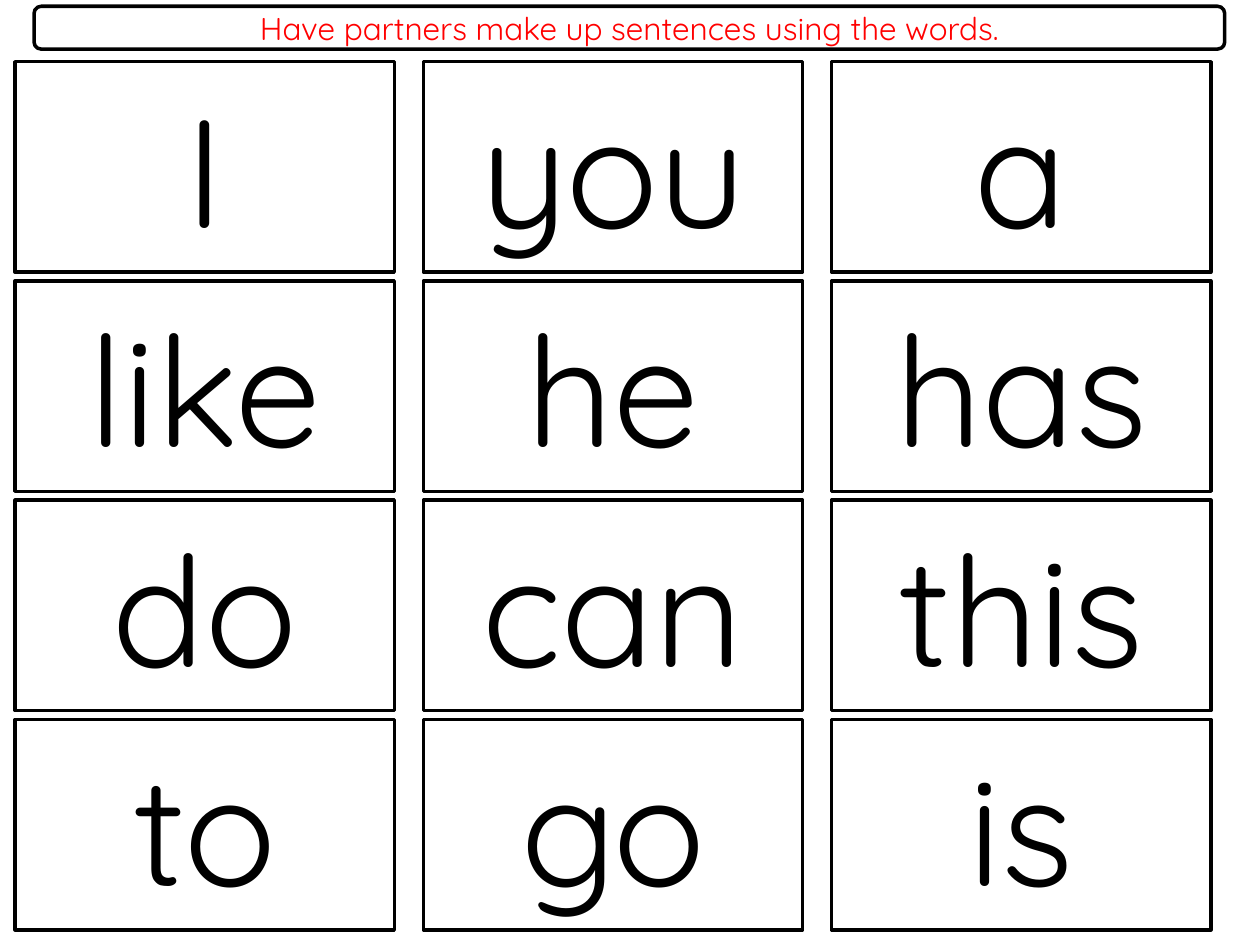
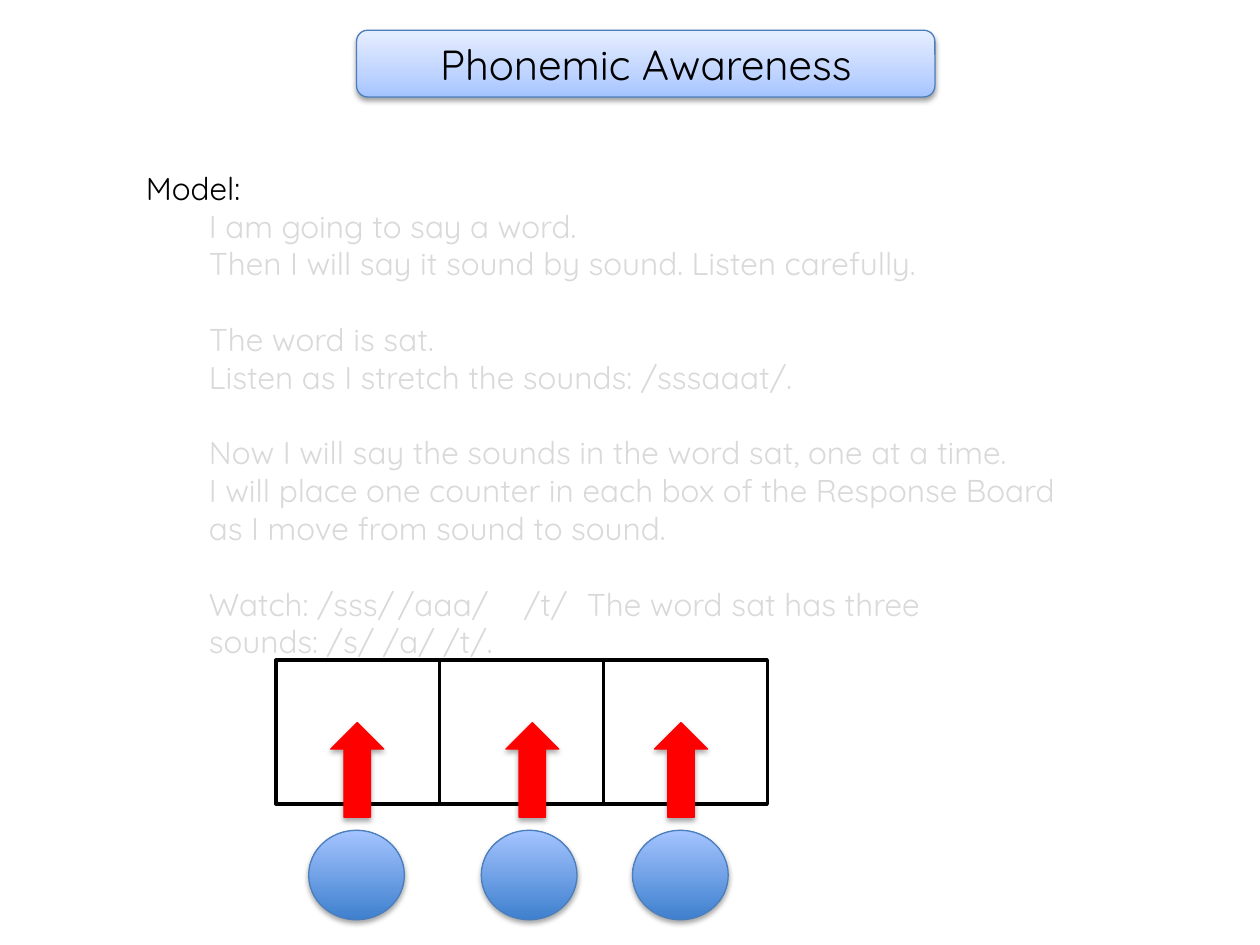
"""Build a word-card slide and a phonemic awareness lesson slide."""
from dataclasses import dataclass
from typing import Optional

from lxml import etree
from pptx import Presentation
from pptx.dml.color import RGBColor
from pptx.enum import shapes, text
from pptx.oxml.ns import qn
from pptx.util import Inches, Pt

FONT = "Quicksand"
BLACK = RGBColor(0x00, 0x00, 0x00)
WHITE = RGBColor(0xFF, 0xFF, 0xFF)
RED = RGBColor(0xFF, 0x00, 0x00)
GREY = RGBColor(0xD9, 0xD9, 0xD9)
EDGE_BLUE = RGBColor(0x4B, 0x7E, 0xBC)
DEEP_BLUE = RGBColor(0x3F, 0x80, 0xCE)
SKY_BLUE = RGBColor(0xA4, 0xC4, 0xFF)
PALE_BLUE = RGBColor(0xBF, 0xD4, 0xFF)
ICE_BLUE = RGBColor(0xE6, 0xEE, 0xFF)
LINE_HEIGHT = Pt(21.6)
SHAPE = shapes.MSO_SHAPE


@dataclass(frozen=True)
class Style:
    """Look of a shape; two or more stops make an upward gradient."""
    kind: int
    stops: tuple
    line: RGBColor
    line_width: float
    shadow: int = 0
    size: float = 18
    color: RGBColor = BLACK
    rotation: int = 0


@dataclass(frozen=True)
class Line:
    """One paragraph of the lesson text."""
    words: str
    color: RGBColor = GREY
    indent: float = 0.5
    tabs: tuple = ()
    gap: bool = False


BANNER = Style(SHAPE.ROUNDED_RECTANGLE, ((0, WHITE),), BLACK, 2, color=RED)
CARD = Style(SHAPE.RECTANGLE, ((0, WHITE),), BLACK, 2, size=88)
TITLE = Style(SHAPE.ROUNDED_RECTANGLE,
              ((0, SKY_BLUE), (35, PALE_BLUE), (100, ICE_BLUE)),
              EDGE_BLUE, 0.75, shadow=38, size=24)
COUNTER = Style(SHAPE.OVAL, ((0, DEEP_BLUE), (100, SKY_BLUE)),
                EDGE_BLUE, 0.75, shadow=35)
ARROW = Style(SHAPE.RIGHT_ARROW, ((0, RED),), RED, 0.75, shadow=35, rotation=270)

WORD_ROWS = (("I", "you", "a"), ("like", "he", "has"),
             ("do", "can", "this"), ("to", "go", "is"))
LESSON = (
    Line("Model:", BLACK, indent=0),
    Line("I am going to say a word."),
    Line("Then I will say it sound by sound. Listen carefully."),
    Line("The word is sat.", gap=True),
    Line("Listen as I stretch the sounds: /sssaaat/."),
    Line("Now I will say the sounds in the word sat, one at a time.", gap=True),
    Line("I will place one counter in each box of the Response Board"),
    Line("as I move from sound to sound."),
    Line("\tWatch: /sss/\t/aaa/\t/t/\tThe word sat has three",
         indent=0, tabs=(0.57, 2.65, 4.05, 5.62), gap=True),
    Line("\tsounds: /s/ /a/ /t/.", indent=0, tabs=(5.62,)),
)
COUNTER_LEFTS = (2.45, 3.82, 5.02)
ARROW_LEFTS = (2.46, 3.85, 5.03)


def paint(sp, stops: tuple) -> None:
    """Fill a shape with one colour or an upward gradient."""
    if len(stops) == 1:
        sp.fill.solid()
        sp.fill.fore_color.rgb = stops[0][1]
        return
    sp.fill.gradient()
    sp.fill.gradient_angle = 90
    stop_list = sp._element.spPr.find(qn("a:gradFill")).find(qn("a:gsLst"))
    for old_stop in list(stop_list):
        stop_list.remove(old_stop)
    for percent, color in stops:
        stop = etree.SubElement(stop_list, qn("a:gs"), pos=str(percent * 1000))
        etree.SubElement(stop, qn("a:srgbClr"), val=str(color))


def cast_shadow(sp, opacity: int) -> None:
    """Give a shape a soft black shadow below it."""
    effects = sp._element.spPr.find(qn("a:effectLst"))
    shadow = etree.SubElement(effects, qn("a:outerShdw"), blurRad=str(Pt(3.1)),
                              dist=str(Pt(1.7)), dir="5400000", rotWithShape="0")
    color = etree.SubElement(shadow, qn("a:srgbClr"), val=str(BLACK))
    etree.SubElement(color, qn("a:alpha"), val=str(opacity * 1000))


def format_run(p, size: float, color: RGBColor) -> None:
    """Set the font of every run in a paragraph."""
    for r in p.runs:
        r.font.name = FONT
        r.font.size = Pt(size)
        r.font.color.rgb = color


def add_styled(slide, style: Style, left: float, top: float, width: float,
               height: float, words: Optional[str] = None) -> None:
    """Draw one shape in a style, with centred words if given."""
    sp = slide.shapes.add_shape(style.kind, Inches(left), Inches(top),
                                Inches(width), Inches(height))
    sp.rotation = style.rotation
    paint(sp, style.stops)
    sp.line.color.rgb = style.line
    sp.line.width = Pt(style.line_width)
    sp.shadow.inherit = False
    if style.shadow:
        cast_shadow(sp, style.shadow)
    if words:
        tf = sp.text_frame
        tf.text = words
        tf.vertical_anchor = text.MSO_ANCHOR.MIDDLE
        p = tf.paragraphs[0]
        p.alignment = text.PP_ALIGN.CENTER
        format_run(p, style.size, style.color)


def add_lesson(slide) -> None:
    """Write the teacher's script with its indents and tab stops."""
    box = slide.shapes.add_textbox(Inches(1.06), Inches(1.29),
                                   Inches(8.94), Inches(4.04))
    tf = box.text_frame
    tf.word_wrap = True
    tf.auto_size = text.MSO_AUTO_SIZE.SHAPE_TO_FIT_TEXT
    tf.text = "\n".join(line.words for line in LESSON)
    for p, line in zip(tf.paragraphs, LESSON):
        if line.gap:
            p.space_before = LINE_HEIGHT
        props = p._p.get_or_add_pPr()
        props.set("marL", str(Inches(line.indent)))
        props.set("indent", "0")
        if line.tabs:
            tab_list = etree.SubElement(props, qn("a:tabLst"))
            for tab in line.tabs:
                etree.SubElement(tab_list, qn("a:tab"),
                                 pos=str(Inches(tab)), algn="l")
        format_run(p, 18, line.color)


def build_word_cards(slide) -> None:
    """Lay out the word cards in a grid under the instruction."""
    add_styled(slide, BANNER, 0.27, 0.05, 9.45, 0.34,
               "Have partners make up sentences using the words.")
    for row, words in enumerate(WORD_ROWS):
        for col, word in enumerate(words):
            add_styled(slide, CARD, 0.12 + 3.24 * col, 0.49 + 1.74 * row,
                       3.01, 1.67, word)


def build_phonemic_awareness(slide) -> None:
    """Show the lesson text above the response board."""
    add_styled(slide, TITLE, 2.83, 0.24, 4.59, 0.53, "Phonemic Awareness")
    add_lesson(slide)
    for col in range(3):
        add_styled(slide, CARD, 2.19 + 1.3 * col, 5.24, 1.3, 1.14)
    for counter_left, arrow_left in zip(COUNTER_LEFTS, ARROW_LEFTS):
        add_styled(slide, COUNTER, counter_left, 6.59, 0.76, 0.71)
        add_styled(slide, ARROW, arrow_left, 5.9, 0.75, 0.42)


def main() -> None:
    """Build both slides and save the deck."""
    prs = Presentation()
    prs.slide_width = Inches(10)
    prs.slide_height = Inches(7.5)
    for build in (build_word_cards, build_phonemic_awareness):
        build(prs.slides.add_slide(prs.slide_layouts[6]))
    prs.save("out.pptx")


if __name__ == "__main__":
    main()
